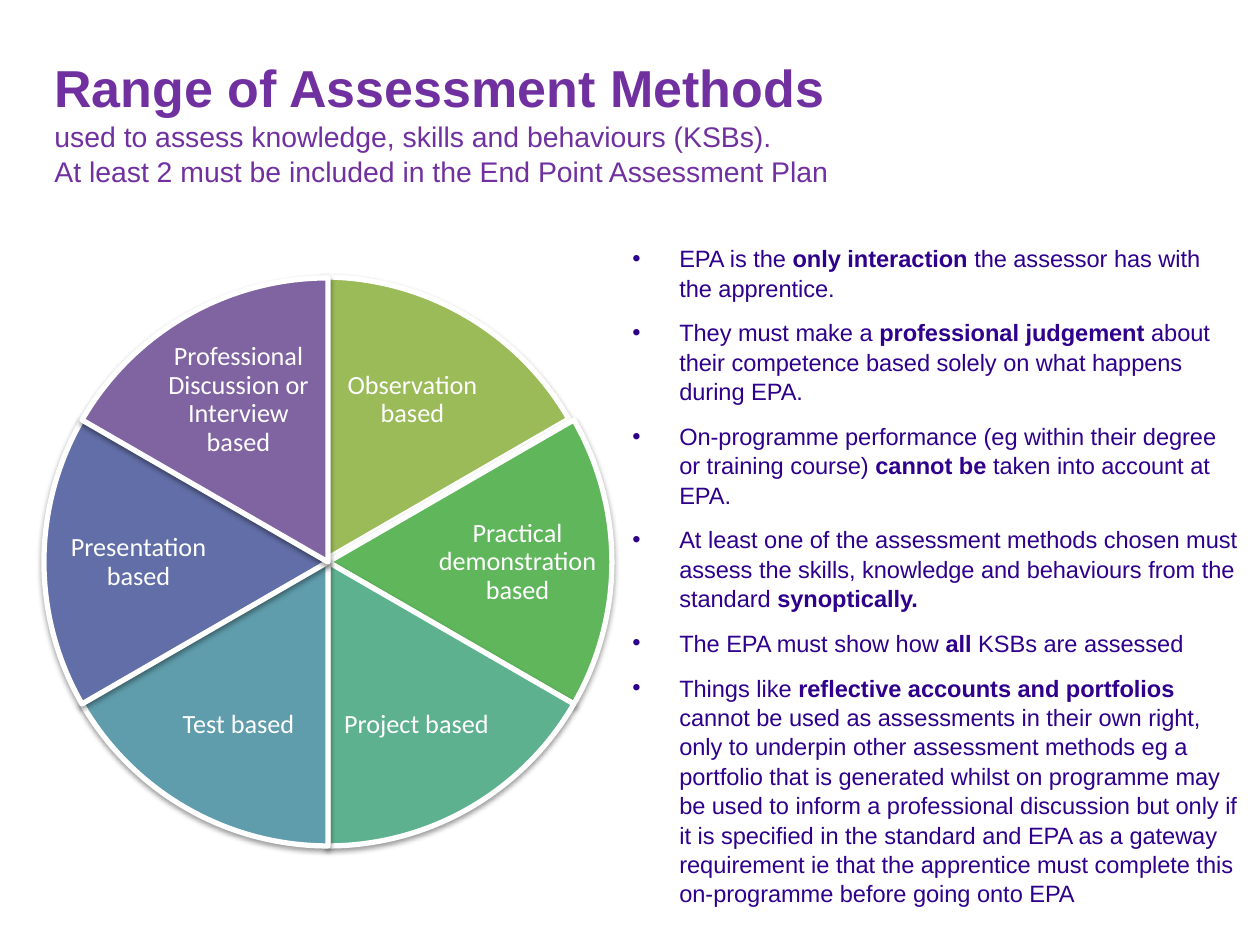
from lxml import etree
from pptx import Presentation
from pptx.dml.color import RGBColor
from pptx.enum.shapes import MSO_SHAPE
from pptx.enum.text import MSO_ANCHOR, PP_ALIGN
from pptx.oxml import parse_xml
from pptx.oxml.ns import nsdecls, qn
from pptx.util import Emu, Pt

PIE = MSO_SHAPE.PIE
TOP, MIDDLE = MSO_ANCHOR.TOP, MSO_ANCHOR.MIDDLE
LEFT, CENTER = PP_ALIGN.LEFT, PP_ALIGN.CENTER

PURPLE = RGBColor(0x70, 0x30, 0xA0)
INDIGO = RGBColor(0x2E, 0x00, 0x8B)
WHITE = RGBColor(0xFF, 0xFF, 0xFF)
OLIVE = RGBColor(0x9B, 0xBB, 0x59)
GREEN = RGBColor(0x5F, 0xB6, 0x5B)
SEA_GREEN = RGBColor(0x5D, 0xB1, 0x8E)
TEAL = RGBColor(0x5F, 0x9D, 0xAC)
SLATE = RGBColor(0x62, 0x6E, 0xA7)
VIOLET = RGBColor(0x80, 0x64, 0xA2)

EMU_PER_PX = 914400 / 126
FULL_TURN = 216
BULLET_INDENT = 47

HEADING = [
    ("Range of Assessment Methods\n", 29.7, True),
    ("used to assess knowledge, skills and behaviours (KSBs).\n"
     "At least 2 must be included in the End Point Assessment Plan", 16.2, False),
]

RULES = [
    "EPA is the **only interaction **the assessor has with the apprentice.",
    "They must make a **professional judgement **about their competence based "
    "solely on what happens during EPA.",
    "On-programme performance (eg within their degree or training course) "
    "**cannot be **taken into account at EPA.",
    "At least one of the assessment methods chosen must assess the skills, "
    "knowledge and behaviours from the standard **synoptically.**",
    "The EPA must show how **all** KSBs are assessed",
    "Things like **reflective accounts and portfolios **cannot be used as "
    "assessments in their own right, only to underpin other assessment methods "
    "eg a portfolio that is generated whilst on programme may be used to inform "
    "a professional discussion but only if it is specified in the standard and "
    "EPA as a gateway requirement ie that the apprentice must complete this "
    "on-programme before going onto EPA",
]

METHODS = [
    ("Observation based", OLIVE, (-5, -1), (286, 61, 165, 122)),
    ("Practical demonstration based", GREEN, (0, 0), (388, 227, 171, 115)),
    ("Project based", SEA_GREEN, (0, 0), (290, 386, 165, 122)),
    ("Test based", TEAL, (0, 0), (112, 386, 165, 122)),
    ("Presentation based", SLATE, (0, 0), (9, 227, 171, 115)),
    ("Professional Discussion or Interview based", VIOLET, (0, 0), (112, 61, 165, 122)),
]


def px(length):
    return Emu(round(length * EMU_PER_PX))


def place(box):
    return [px(length) for length in box]


def add_bullet(paragraph):
    properties = paragraph._p.get_or_add_pPr()
    properties.set("marL", str(px(BULLET_INDENT)))
    properties.set("indent", str(-px(BULLET_INDENT)))
    etree.SubElement(properties, qn("a:buFont")).set("typeface", "Arial")
    etree.SubElement(properties, qn("a:buChar")).set("char", "•")


def add_text(shapes, box, paragraphs, font="Arial", color=WHITE, anchor=TOP,
             align=LEFT, line_spacing=1.04, before=0, after=0, inset=None, bullet=False):
    frame = shapes.add_textbox(*place(box)).text_frame
    frame.word_wrap = True
    frame.vertical_anchor = anchor
    if inset is not None:
        frame.margin_left = frame.margin_right = px(inset)
        frame.margin_top = frame.margin_bottom = px(inset)
    for index, runs in enumerate(paragraphs):
        paragraph = frame.add_paragraph() if index else frame.paragraphs[0]
        if bullet:
            add_bullet(paragraph)
        paragraph.alignment = align
        paragraph.line_spacing = line_spacing
        paragraph.space_before = Pt(before if index else 0)
        paragraph.space_after = Pt(after)
        for text, size, bold in runs:
            for line_number, line in enumerate(text.split("\n")):
                if line_number:
                    paragraph.add_line_break()
                if line:
                    run = paragraph.add_run()
                    run.text = line
                    run.font.name = font
                    run.font.size = Pt(size)
                    run.font.bold = bold
                    run.font.color.rgb = color


def add_shadow(shape):
    shape.shadow.inherit = False
    effects = shape._element.spPr.find(qn("a:effectLst"))
    effects.append(parse_xml(
        f'<a:outerShdw {nsdecls("a")} blurRad="{Pt(3.1)}" dist="{Pt(1.6)}" '
        'dir="5400000" rotWithShape="0"><a:srgbClr val="000000">'
        '<a:alpha val="38000"/></a:srgbClr></a:outerShdw>'))


def add_heading(slide, box):
    add_text(slide.shapes, box, [HEADING], color=PURPLE, anchor=MIDDLE)


def add_rules(slide, box):
    paragraphs = [
        [(part, 13.5, index % 2 == 1)
         for index, part in enumerate(rule.split("**")) if part]
        for rule in RULES
    ]
    add_text(slide.shapes, box, paragraphs, color=INDIGO, before=2.7, after=6, bullet=True)


def add_method_wheel(slide, box):
    left, top, width, height = box
    wheel = slide.shapes.add_group_shape().shapes
    sweep = FULL_TURN // len(METHODS)
    start = FULL_TURN * 3 // 4
    for method, color, (shift_x, shift_y), (x, y, label_width, label_height) in METHODS:
        end = (start + sweep) % FULL_TURN
        wedge = wheel.add_shape(PIE, *place((left + shift_x, top + shift_y, width, height)))
        wedge.adjustments[0] = start
        wedge.adjustments[1] = end
        wedge.fill.solid()
        wedge.fill.fore_color.rgb = color
        wedge.line.color.rgb = WHITE
        wedge.line.width = Pt(3)
        add_shadow(wedge)
        add_text(wheel, (left + x, top + y, label_width, label_height),
                 [[(method, 15, False)]], font="Calibri", anchor=MIDDLE,
                 align=CENTER, line_spacing=0.9, inset=3)
        start = end


def main():
    deck = Presentation()
    deck.slide_width, deck.slide_height = px(1260), px(945)
    slide = deck.slides.add_slide(deck.slide_layouts[6])
    add_heading(slide, (42, 59, 1176, 123))
    add_rules(slide, (620, 237, 630, 708))
    add_method_wheel(slide, (44, 278, 568, 568))
    deck.save("out.pptx")


if __name__ == "__main__":
    main()
